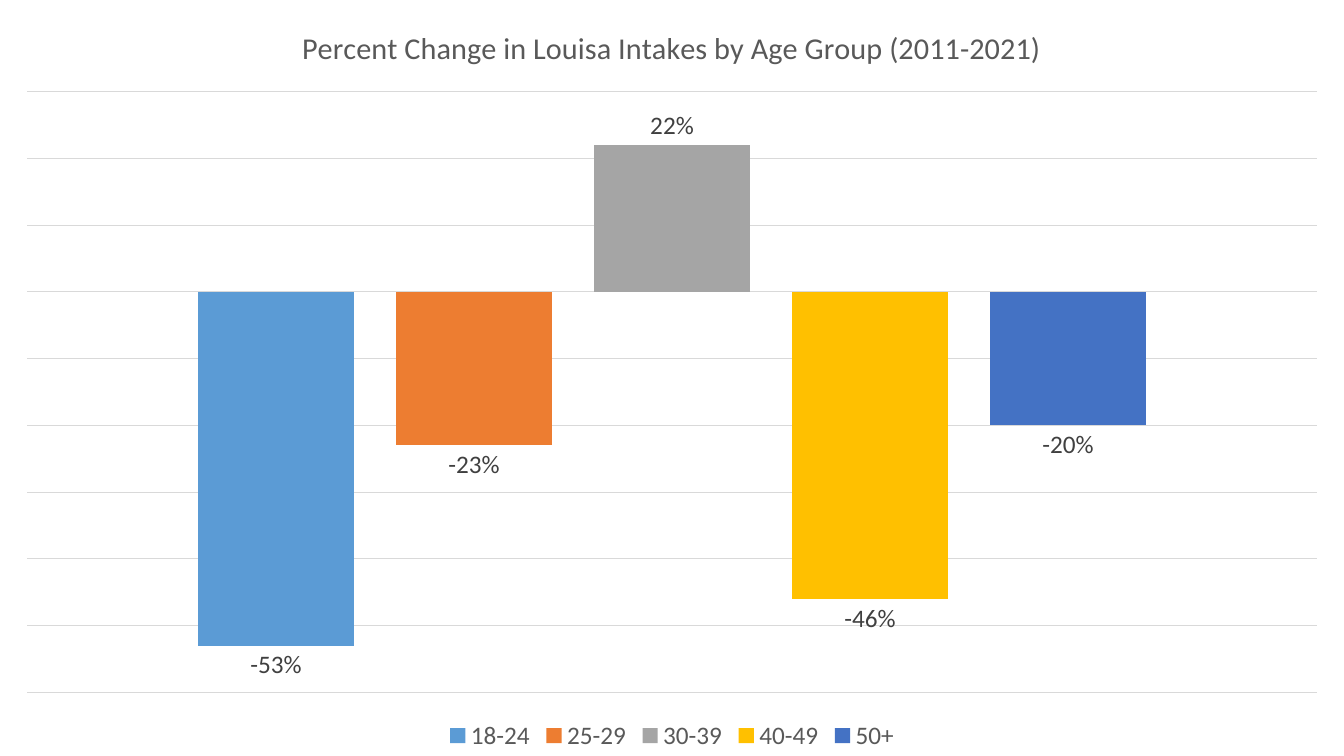
from lxml import etree
from pptx import Presentation
from pptx import util as u
from pptx.chart.data import CategoryChartData
from pptx.dml.color import RGBColor
from pptx.enum import chart as kinds
from pptx.oxml import ns

COLORS = {
    "text": "595959", "label": "404040", "grid": "D9D9D9",
    "18-24": "5B9BD5", "25-29": "ED7D31", "30-39": "A5A5A5",
    "40-49": "FFC000", "50+": "4472C4",
}
CHANGES = {"18-24": -0.53, "25-29": -0.23, "30-39": 0.22,
           "40-49": -0.46, "50+": -0.2}
TITLE = "Percent Change in Louisa Intakes by Age Group (2011-2021)"
WIDTH, HEIGHT = 13.33, 7.5
PLOT = {"x": 0.27 / WIDTH, "y": 0.91 / HEIGHT,
        "w": 12.79 / WIDTH, "h": 5.96 / HEIGHT}


def apply(target, values):
    for name, value in values.items():
        setattr(target, name, value)


def format_font(font, color, size=18):
    apply(font, {"name": "Calibri", "size": u.Pt(size), "bold": False})
    font.color.rgb = RGBColor.from_string(COLORS[color])


def format_line(line, color, width=0.75):
    line.color.rgb = RGBColor.from_string(COLORS[color])
    line.width = u.Pt(width)


def add_age_chart(page):
    data = CategoryChartData(number_format="0%")
    data.categories = ["1"]
    for group, change in CHANGES.items():
        data.add_series(group, [change])
    frame = page.shapes.add_chart(
        kinds.XL_CHART_TYPE.COLUMN_CLUSTERED, 0, 0,
        u.Inches(WIDTH), u.Inches(HEIGHT), data)
    return frame.chart


def format_title(chart):
    chart.has_title = True
    chart.chart_title.include_in_layout = False
    text = chart.chart_title.text_frame
    text.text = TITLE
    format_font(text.paragraphs[0].runs[0].font, "text", 21.6)


def format_axes(chart):
    hidden = {"tick_label_position": kinds.XL_TICK_LABEL_POSITION.NONE,
              "major_tick_mark": kinds.XL_TICK_MARK.NONE,
              "minor_tick_mark": kinds.XL_TICK_MARK.NONE}
    apply(chart.category_axis, hidden)
    format_line(chart.category_axis.format.line, "grid")
    apply(chart.value_axis, {
        **hidden, "minimum_scale": -0.6, "maximum_scale": 0.3,
        "major_unit": 0.1, "has_major_gridlines": True})
    chart.value_axis.format.line.fill.background()
    format_line(chart.value_axis.major_gridlines.format.line, "grid")


def format_columns(chart):
    plot = chart.plots[0]
    apply(plot, {"gap_width": 219, "overlap": -27, "vary_by_categories": False})
    for series in plot.series:
        series.invert_if_negative = False
        series.format.fill.solid()
        series.format.fill.fore_color.rgb = RGBColor.from_string(COLORS[series.name])
        labels = series.data_labels
        apply(labels, {"show_value": True, "number_format": "0%",
                       "number_format_is_linked": False,
                       "position": kinds.XL_LABEL_POSITION.OUTSIDE_END})
        format_font(labels.font, "label")


def format_legend(chart):
    chart.has_legend = True
    apply(chart.legend, {"position": kinds.XL_LEGEND_POSITION.BOTTOM,
                         "include_in_layout": False})
    format_font(chart.legend.font, "text")


def place_plot(chart):
    area = chart.plots[0]._element.getparent()
    for old in area.findall(ns.qn("c:layout")):
        area.remove(old)
    layout = etree.Element(ns.qn("c:layout"))
    manual = etree.SubElement(layout, ns.qn("c:manualLayout"))
    settings = {"layoutTarget": "inner", "xMode": "edge", "yMode": "edge"}
    settings.update({key: f"{share:.4f}" for key, share in PLOT.items()})
    for name, value in settings.items():
        etree.SubElement(manual, ns.qn(f"c:{name}")).set("val", value)
    area.insert(0, layout)


def main():
    deck = Presentation()
    apply(deck, {"slide_width": u.Inches(WIDTH), "slide_height": u.Inches(HEIGHT)})
    page = deck.slides.add_slide(deck.slide_layouts[6])

    # Chart of intake changes, one column per age group
    chart = add_age_chart(page)
    format_font(chart.font, "text")
    format_title(chart)
    format_axes(chart)
    format_columns(chart)
    format_legend(chart)
    place_plot(chart)

    deck.save("out.pptx")


if __name__ == "__main__":
    main()
